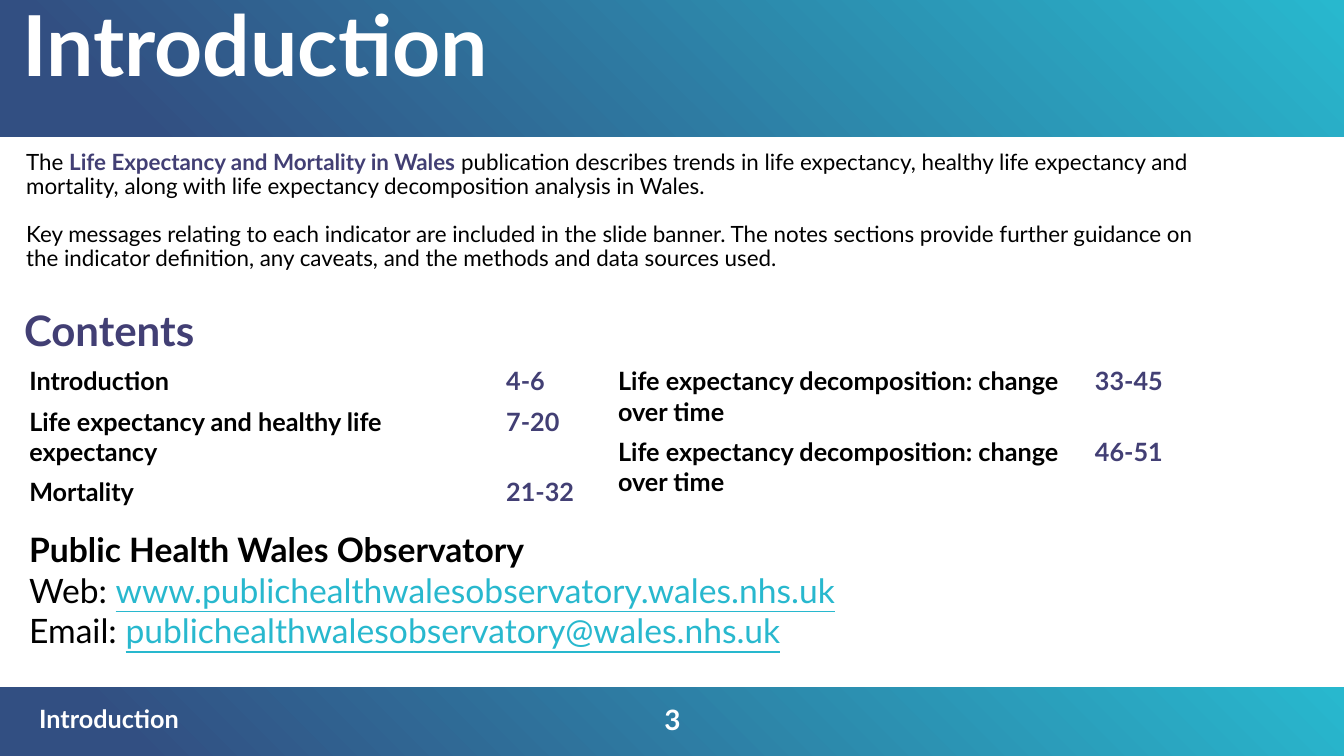
from pptx import Presentation
from pptx.dml.color import RGBColor
from pptx.enum.shapes import MSO_SHAPE
from pptx.enum.text import MSO_ANCHOR, PP_ALIGN
from pptx.util import Inches, Pt

RECTANGLE = MSO_SHAPE.RECTANGLE
TOP, MIDDLE = MSO_ANCHOR.TOP, MSO_ANCHOR.MIDDLE
LEFT, CENTER = PP_ALIGN.LEFT, PP_ALIGN.CENTER

FONT = "Lato"
COLORS = {
    "navy": "324F82",
    "teal": "28B8CE",
    "purple": "423F74",
    "black": "000000",
    "white": "FFFFFF",
}
SLIDE_W, SLIDE_H = 13.33, 7.5
LINE_H = 0.3
CELL_MARGIN_X, CELL_MARGIN_Y = 0.1, 0.05
CONTENTS_COLUMNS = (4.73, 1.37)
CONTENTS_ROWS = 5

# Each entry: topic, pages, number of text lines
CONTENTS_LEFT = [
    ("Introduction", "4-6", 1),
    ("Life expectancy and healthy life expectancy", "7-20", 2),
    ("Mortality", "21-32", 1),
]
CONTENTS_RIGHT = [
    ("Life expectancy decomposition: change over time", "33-45", 2),
    ("Life expectancy decomposition: change over time", "46-51", 2),
]
INTRO = [
    [("The ", {}),
     ("Life Expectancy and Mortality in Wales", {"color": "purple", "bold": True}),
     (" publication describes trends in life expectancy, healthy life expectancy and "
      "mortality, along with life expectancy decomposition analysis in Wales.", {})],
    [("Key messages relating to each indicator are included in the slide banner. "
      "The notes sections provide further guidance on the indicator definition, "
      "any caveats, and the methods and data sources used.", {})],
]
LINK = {"color": "teal", "underline": True}
CONTACT = [
    [("Public Health Wales Observatory", {"bold": True})],
    [("Web: ", {}), ("www.publichealthwalesobservatory.wales.nhs.uk", LINK)],
    [("Email: ", {}), ("publichealthwalesobservatory@wales.nhs.uk", LINK)],
]


def write(frame, paragraphs, size, color="black", bold=False, align=LEFT,
          line_spacing=1.0, gap=0):
    """Fill a text frame; each paragraph is a string or a list of (text, format) runs."""
    frame.word_wrap = True
    for index, runs in enumerate(paragraphs):
        paragraph = frame.add_paragraph() if index else frame.paragraphs[0]
        paragraph.alignment = align
        paragraph.line_spacing = line_spacing
        if index and gap:
            paragraph.space_before = Pt(gap)
        for text, style in [(runs, {})] if isinstance(runs, str) else runs:
            run = paragraph.add_run()
            run.text = text
            font = run.font
            font.name, font.size = FONT, Pt(size)
            font.bold = style.get("bold", bold)
            font.underline = style.get("underline", False)
            font.color.rgb = RGBColor.from_string(COLORS[style.get("color", color)])


def add_text(slide, box, paragraphs, size, inset=(0.1, 0.05), anchor=TOP, **style):
    frame = slide.shapes.add_textbox(*map(Inches, box)).text_frame
    frame.margin_left = frame.margin_right = Inches(inset[0])
    frame.margin_top = frame.margin_bottom = Inches(inset[1])
    frame.vertical_anchor = anchor
    write(frame, paragraphs, size, **style)


def add_band(slide, box):
    band = slide.shapes.add_shape(RECTANGLE, *map(Inches, box))
    band.shadow.inherit = False
    band.line.fill.background()
    band.fill.gradient()
    band.fill.gradient_angle = 45
    stops = band.fill.gradient_stops
    for stop, color, position in zip(stops, ("navy", "teal"), (0.1, 1.0)):
        stop.color.rgb = RGBColor.from_string(COLORS[color])
        stop.position = position


def add_header(slide, box):
    left, top, _, _ = box
    add_band(slide, box)
    add_text(slide, (left + 0.14, top, 11.77, 1.1), ["Introduction"], 60,
             inset=(0.08, 0.04), color="white", bold=True, line_spacing=0.9)


def add_footer(slide, box):
    left, top, _, _ = box
    add_band(slide, box)
    add_text(slide, (left + 5.17, top + 0.12, 3, 0.4), ["3"], 20, anchor=MIDDLE,
             color="white", bold=True, align=CENTER)
    add_text(slide, (left + 0.29, top + 0.19, 3.93, 0.27), ["Introduction"], 18,
             anchor=MIDDLE, color="white", bold=True, line_spacing=0.9)


def add_contents_table(slide, left, top, entries):
    """Place the entries in a table whose remaining rows stay free."""
    entries = entries + [("", "", 1)] * (CONTENTS_ROWS - len(entries))
    heights = [lines * LINE_H + 2 * CELL_MARGIN_Y for _, _, lines in entries]
    box = (left, top, sum(CONTENTS_COLUMNS), sum(heights))
    table = slide.shapes.add_table(CONTENTS_ROWS, len(CONTENTS_COLUMNS),
                                   *map(Inches, box)).table
    table.first_row = table.horz_banding = False
    for column, width in zip(table.columns, CONTENTS_COLUMNS):
        column.width = Inches(width)
    for row, height, (topic, pages, _) in zip(table.rows, heights, entries):
        row.height = Inches(height)
        for cell, text, color in zip(row.cells, (topic, pages), ("black", "purple")):
            cell.fill.background()
            cell.margin_left = cell.margin_right = Inches(CELL_MARGIN_X)
            cell.margin_top = cell.margin_bottom = Inches(CELL_MARGIN_Y)
            if text:
                write(cell.text_frame, [text], 18, color=color, bold=True)


def add_contents(slide, left, top):
    add_text(slide, (left, top, 2.19, 0.61), ["Contents"], 30, color="purple", bold=True)
    for offset, entries in ((0.05, CONTENTS_LEFT), (5.89, CONTENTS_RIGHT)):
        add_contents_table(slide, left + offset, top + 0.61, entries)


def main():
    deck = Presentation()
    deck.slide_width, deck.slide_height = Inches(SLIDE_W), Inches(SLIDE_H)
    slide = deck.slides.add_slide(deck.slide_layouts[6])
    add_header(slide, (0, 0, SLIDE_W, 1.36))
    add_footer(slide, (0, 6.82, SLIDE_W, SLIDE_H - 6.82))
    add_text(slide, (0.18, 1.45, 12.11, 1.4), INTRO, 16, inset=(0.08, 0.05),
             line_spacing=0.9, gap=17)
    add_contents(slide, 0.14, 2.97)
    add_text(slide, (0.29, 5.25, 11.77, 1.35), CONTACT, 24, inset=(0, 0))
    deck.save("out.pptx")


if __name__ == "__main__":
    main()
